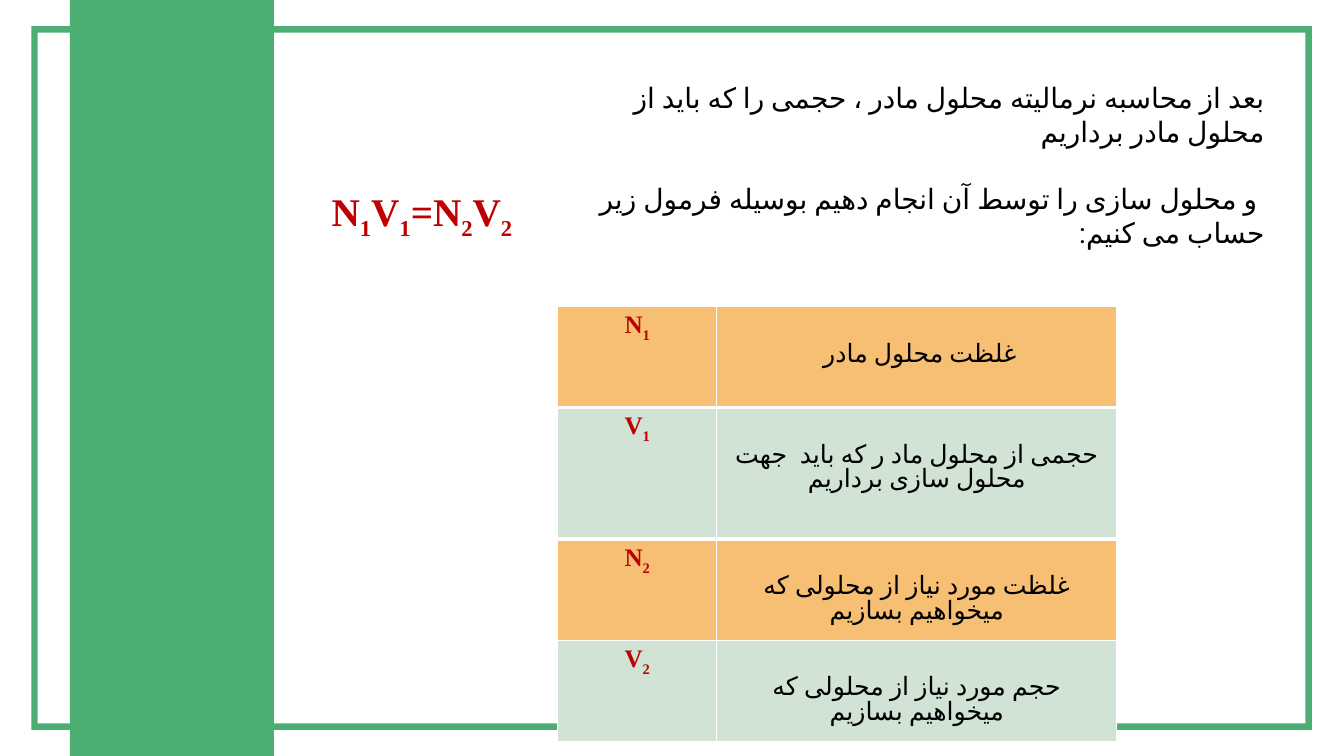
from itertools import groupby

from lxml.etree import SubElement
from pptx import Presentation
from pptx.dml.color import RGBColor
from pptx.enum.lang import MSO_LANGUAGE_ID
from pptx.enum.shapes import MSO_SHAPE
from pptx.enum.text import PP_ALIGN
from pptx.oxml.ns import qn
from pptx.util import Inches, Pt

SLIDE_WIDTH, SLIDE_HEIGHT = Inches(13.33), Inches(7.5)
GREEN, ORANGE, MINT = "4BAF73", "F6BF73", "D0E3D5"
RED, BLACK, WHITE = "C00000", "000000", "FFFFFF"

EXPLANATION = [
    "بعد از محاسبه نرمالیته محلول مادر ، حجمی را که باید از محلول مادر برداریم",
    " و محلول سازی را توسط آن انجام دهیم بوسیله فرمول زیر حساب می کنیم:",
]
QUANTITIES = [
    ("N1", "غلظت محلول مادر ", 13.36),
    ("V1", "حجمی از محلول ماد ر که باید  جهت محلول سازی برداریم", 17.45),
    ("N2", "غلظت مورد نیاز از محلولی که میخواهیم بسازیم", 13.36),
    ("V2", "حجم مورد نیاز از محلولی که میخواهیم بسازیم", 13.36),
]


def color(hex_value):
    return RGBColor.from_string(hex_value)


def across(percent):
    return int(SLIDE_WIDTH * percent / 100)


def down(percent):
    return int(SLIDE_HEIGHT * percent / 100)


def area(left, top, width, height):
    return across(left), down(top), across(width), down(height)


def add_green_shape(slide, kind, place):
    panel = slide.shapes.add_shape(kind, *area(*place))
    panel.shadow.inherit = False
    panel.fill.solid()
    panel.fill.fore_color.rgb = color(GREEN)
    panel.line.fill.background()
    return panel


def add_text_frame(slide, place):
    frame = slide.shapes.add_textbox(*area(*place)).text_frame
    frame.word_wrap = True
    return frame


def style_run(run, size, font_name, ink, bold):
    run.font.size = Pt(size)
    run.font.name = font_name
    run.font.bold = bold
    run.font.color.rgb = color(ink)


def write_persian(paragraph, sentence, size, alignment):
    paragraph.text = sentence
    paragraph.alignment = alignment
    paragraph._p.get_or_add_pPr().set("rtl", "1")
    for run in paragraph.runs:
        style_run(run, size, "Roboto", BLACK, False)
        run.font.language_id = MSO_LANGUAGE_ID.FARSI
        SubElement(run._r.get_or_add_rPr(), qn("a:cs"), typeface="Roboto")


def write_formula(paragraph, formula, size, alignment):
    paragraph.alignment = alignment
    for is_index, symbols in groupby(formula, str.isdigit):
        run = paragraph.add_run()
        run.text = "".join(symbols)
        style_run(run, size, "Times New Roman", RED, True)
        if is_index:
            run._r.get_or_add_rPr().set("baseline", "-25000")


def add_edge(cell, side, width):
    edge = SubElement(cell._tc.get_or_add_tcPr(), qn(side), w=str(Pt(width)))
    paint = SubElement(edge, qn("a:solidFill"))
    SubElement(paint, qn("a:srgbClr"), val=WHITE)


def add_explanation(slide, place):
    frame = add_text_frame(slide, place)
    frame.text = "\n".join(EXPLANATION)
    for paragraph, sentence in zip(frame.paragraphs, EXPLANATION):
        write_persian(paragraph, sentence, 20, PP_ALIGN.RIGHT)
    frame.paragraphs[-1].space_before = Pt(24)


def add_quantities(slide, left, top, column_widths):
    heights = [height for _, _, height in QUANTITIES]
    place = area(left, top, sum(column_widths), sum(heights))
    table = slide.shapes.add_table(len(QUANTITIES), len(column_widths), *place).table
    for column, width in zip(table.columns, column_widths):
        column.width = across(width)
    for index, (symbol, meaning, height) in enumerate(QUANTITIES):
        table.rows[index].height = down(height)
        symbol_cell, meaning_cell = table.rows[index].cells
        for cell in (symbol_cell, meaning_cell):
            if index == 0:
                add_edge(cell, "a:lnB", 3)
            elif index == 1:
                add_edge(cell, "a:lnT", 3)
            cell.fill.solid()
            cell.fill.fore_color.rgb = color(MINT if index % 2 else ORANGE)
        write_formula(symbol_cell.text_frame.paragraphs[0], symbol, 18, PP_ALIGN.CENTER)
        meaning_cell.margin_top = down(4.8)
        meaning_line = meaning_cell.text_frame.paragraphs[0]
        meaning_line.line_spacing = 0.82
        write_persian(meaning_line, meaning, 18, PP_ALIGN.CENTER)


def main():
    deck = Presentation()
    deck.slide_width, deck.slide_height = SLIDE_WIDTH, SLIDE_HEIGHT
    slide = deck.slides.add_slide(deck.slide_layouts[6])
    border = add_green_shape(slide, MSO_SHAPE.FRAME, (2.33, 3.47, 95.27, 93.07))
    border.adjustments[0] = 0.009
    add_green_shape(slide, MSO_SHAPE.RECTANGLE, (5.2, 0, 15.18, 100))
    add_explanation(slide, (42.46, 10, 52.36, 14.8))
    formula_frame = add_text_frame(slide, (23.93, 24.13, 15.68, 13.87))
    write_formula(formula_frame.paragraphs[0], "N1V1=N2V2", 28, PP_ALIGN.LEFT)
    add_quantities(slide, 41.49, 40.53, (11.85, 29.75))
    deck.save("out.pptx")


if __name__ == "__main__":
    main()
